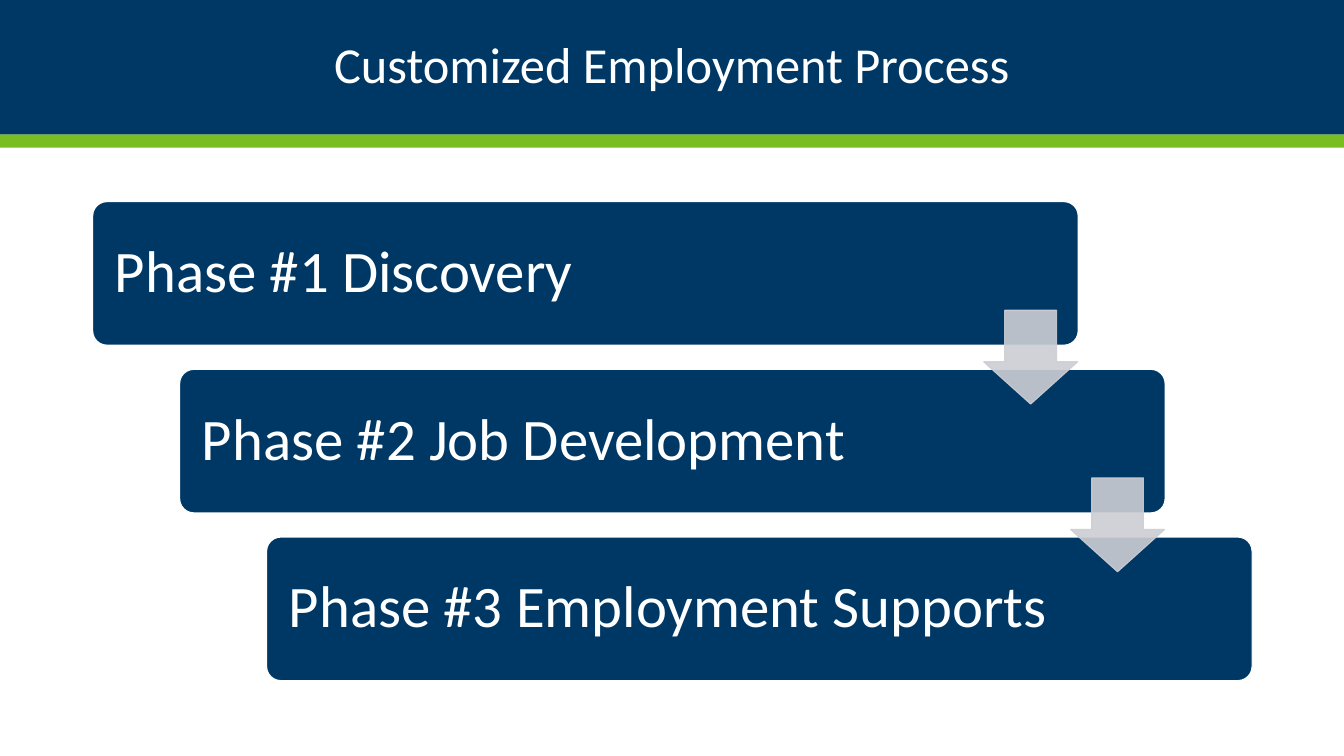
from pptx import Presentation
from pptx.dml.color import RGBColor
from pptx.enum.shapes import MSO_SHAPE
from pptx.enum.text import MSO_ANCHOR, PP_ALIGN
from pptx.oxml.ns import qn
from pptx.util import Pt
from lxml import etree

# Content
TITLE = "Customized Employment Process"
PHASES = [
    "Phase #1 Discovery",
    "Phase #2 Job Development",
    "Phase #3 Employment Supports",
]
COLORS = {"navy": "003865", "green": "78BE21", "white": "FFFFFF", "gray": "CCCED3"}
FONT = "Calibri"

# Layout in points
SLIDE_W, SLIDE_H = 960, 540
HEADER_H, STRIPE_H = 96, 9.4
PHASE_LEFT, PHASE_TOP, PHASE_W, PHASE_H = 66.2, 144, 704, 102.6
STEP_X, STEP_Y = 62.1, 119.8
ARROW_LEFT, ARROW_TOP, ARROW_SIZE = 702.7, 221.6, 67
ARROW_OPACITY = 90


def rgb(name):
    return RGBColor.from_string(COLORS[name])


def add_block(slide, kind, left, top, width, height, fill, line=None):
    block = slide.shapes.add_shape(kind, Pt(left), Pt(top), Pt(width), Pt(height))
    block.shadow.inherit = False
    block.fill.solid()
    block.fill.fore_color.rgb = rgb(fill)
    if line:
        block.line.color.rgb = rgb(line)
        block.line.width = Pt(0.85)
    else:
        block.line.fill.background()
    return block


def write(block, text, size, align, inset):
    frame = block.text_frame
    frame.word_wrap = True
    frame.vertical_anchor = MSO_ANCHOR.MIDDLE
    frame.margin_left = frame.margin_right = Pt(inset)
    frame.margin_top = frame.margin_bottom = Pt(3.6)
    paragraph = frame.paragraphs[0]
    paragraph.alignment = align
    paragraph.line_spacing = 0.9
    run = paragraph.add_run()
    run.text = text
    run.font.name = FONT
    run.font.size = Pt(size)
    run.font.color.rgb = rgb("white")


def set_opacity(block, percent):
    for color in block.element.spPr.iter(qn("a:srgbClr")):
        etree.SubElement(color, qn("a:alpha"), val=str(percent * 1000))


prs = Presentation()
prs.slide_width, prs.slide_height = Pt(SLIDE_W), Pt(SLIDE_H)
slide = prs.slides.add_slide(prs.slide_layouts[6])

# Header band and stripe
add_block(slide, MSO_SHAPE.RECTANGLE, 0, HEADER_H, SLIDE_W, STRIPE_H, "green")
header = add_block(slide, MSO_SHAPE.RECTANGLE, 0, 0, SLIDE_W, HEADER_H, "navy")
write(header, TITLE, 36, PP_ALIGN.CENTER, 64.8)

# Staircase of phases
for i, phase_text in enumerate(PHASES):
    phase = add_block(slide, MSO_SHAPE.ROUNDED_RECTANGLE,
                      PHASE_LEFT + i * STEP_X, PHASE_TOP + i * STEP_Y,
                      PHASE_W, PHASE_H, "navy", "white")
    phase.adjustments[0] = 0.1
    write(phase, phase_text, 42, PP_ALIGN.LEFT, 12.9)

# Arrows from each phase to the next
for i in range(len(PHASES) - 1):
    arrow = add_block(slide, MSO_SHAPE.DOWN_ARROW,
                      ARROW_LEFT + i * STEP_X, ARROW_TOP + i * STEP_Y,
                      ARROW_SIZE, ARROW_SIZE, "gray", "gray")
    arrow.adjustments[0], arrow.adjustments[1] = 0.55, 0.45
    set_opacity(arrow, ARROW_OPACITY)

prs.save("out.pptx")
